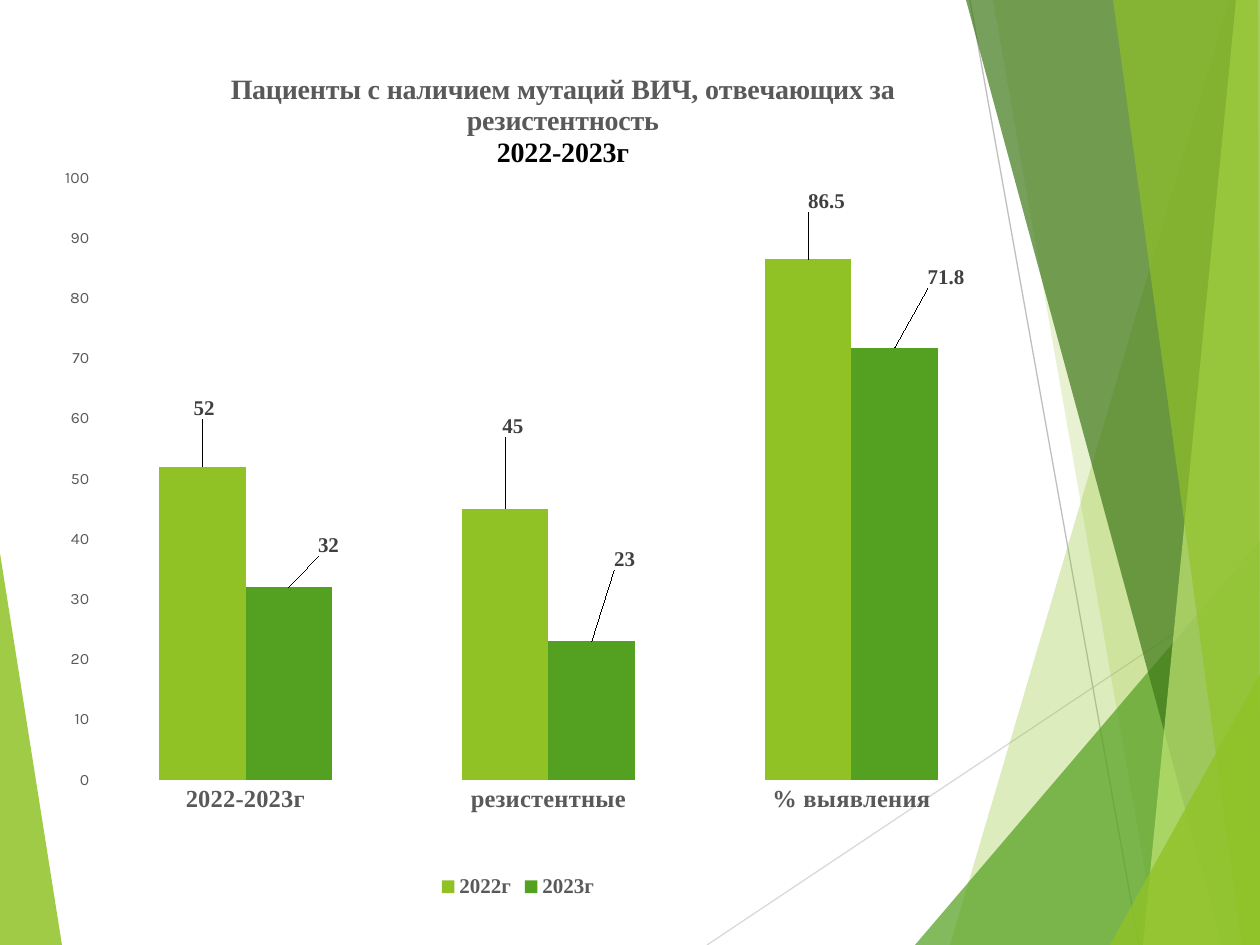
from lxml.etree import SubElement
from pptx import Presentation
from pptx.chart.data import CategoryChartData
from pptx.dml.color import RGBColor
from pptx.enum.chart import (XL_CHART_TYPE as ChartType, XL_LABEL_POSITION as LabelPosition,
                             XL_LEGEND_POSITION as LegendPosition, XL_TICK_MARK as TickMark)
from pptx.enum.shapes import MSO_CONNECTOR as Connector
from pptx.oxml.ns import qn
from pptx.util import Emu, Inches, Pt

PX = 914400 / 126
SERIF, SANS = "Times New Roman", "Karla"
BLACK = RGBColor(0x00, 0x00, 0x00)
GRAY = RGBColor(0x59, 0x59, 0x59)
LABEL_GRAY = RGBColor(0x40, 0x40, 0x40)
LIGHT_LINE = RGBColor(0xD9, 0xD9, 0xD9)
MID_LINE = RGBColor(0xBF, 0xBF, 0xBF)
LIME = RGBColor(0x90, 0xC2, 0x26)
GREEN = RGBColor(0x54, 0xA0, 0x21)
DARK_GREEN = RGBColor(0x3F, 0x78, 0x19)
PALE_LIME = RGBColor(0xC0, 0xE4, 0x74)

LEFT_FACET = ([(0, 553), (62, 945), (0, 945)], LIME, 85)
RAYS = [((707, 945), (1260, 576), LIGHT_LINE), ((970, 0), (1139, 945), MID_LINE)]
RIGHT_FACETS = [
    ([(1229, 0), (950, 945), (1260, 945), (1260, 0)], LIME, 30),
    ([(993, 0), (1158, 945), (1260, 945), (1260, 0)], LIME, 20),
    ([(915, 945), (1260, 541), (1260, 945)], GREEN, 72),
    ([(966, 0), (1222, 945), (1260, 945), (1260, 0)], DARK_GREEN, 70),
    ([(1236, 0), (1143, 945), (1260, 945), (1260, 0)], PALE_LIME, 70),
    ([(1113, 0), (1242, 945), (1260, 945), (1258, 0)], LIME, 65),
    ([(1110, 945), (1260, 674), (1260, 945)], LIME, 80),
]

CHART_BOX = (33, 42, 970, 861)
CATEGORIES = ["2022-2023г", "резистентные", "% выявления"]
# name, values, colour, shift of each label in px from its place above the bar
SERIES = [
    ("2022г", (52, 45, 86.5), LIME, [(2, -42), (8, -66), (18, -42)]),
    ("2023г", (32, 23, 71.8), GREEN, [(40, -26), (33, -66), (51, -54)]),
]
TITLE = [("Пациенты с наличием мутаций ВИЧ, отвечающих за резистентность", GRAY),
         ("2022-2023г", BLACK)]


def set_font(font, size, color, name=SERIF, bold=True):
    font.size, font.name, font.bold = Pt(size), name, bold
    font.color.rgb = color


def set_layout(parent, index, **values):
    """Give a chart part a manual layout as its child number index."""
    for old in parent.findall(qn("c:layout")):
        parent.remove(old)
    layout = SubElement(parent, qn("c:layout"))
    parent.insert(index, layout)
    manual = SubElement(layout, qn("c:manualLayout"))
    for tag, value in values.items():
        SubElement(manual, qn(f"c:{tag}")).set("val", str(value))


class SlideBuilder:
    def __init__(self, slide):
        self.shapes = slide.shapes

    def facet(self, points, color, opacity):
        builder = self.shapes.build_freeform(*points[0], scale=PX)
        builder.add_line_segments(points[1:], close=True)
        shape = builder.convert_to_shape()
        shape.shadow.inherit = False
        shape.fill.solid()
        shape.fill.fore_color.rgb = color
        shape.line.fill.background()
        fill_color = shape.element.spPr.find(qn("a:solidFill")).find(qn("a:srgbClr"))
        SubElement(fill_color, qn("a:alpha")).set("val", str(opacity * 1000))

    def ray(self, start, end, color):
        ends = [Emu(round(value * PX)) for value in (*start, *end)]
        line = self.shapes.add_connector(Connector.STRAIGHT, *ends)
        line.line.color.rgb = color
        line.line.width = Pt(0.75)
        SubElement(line.element.spPr, qn("a:effectLst"))

    def column_chart(self, box):
        data = CategoryChartData()
        data.categories = CATEGORIES
        for name, values, *_ in SERIES:
            data.add_series(name, values)
        place = [Emu(round(value * PX)) for value in box]
        chart = self.shapes.add_chart(ChartType.COLUMN_CLUSTERED, *place, data).chart
        set_font(chart.font, 10, BLACK, SANS, False)
        plot = chart.plots[0]
        plot.gap_width, plot.overlap, plot.vary_by_categories = 150, 0, False
        set_layout(chart.element.chart.plotArea, 0, layoutTarget="inner", xMode="edge",
                   yMode="edge", x=0.063, y=0.158, w=0.937, h=0.699)
        self.chart_title(chart)
        self.axes(chart)
        for series, (_, _, color, shifts) in zip(plot.series, SERIES):
            series.format.fill.solid()
            series.format.fill.fore_color.rgb = color
            self.value_labels(series, shifts, box)
        chart.has_legend = True
        chart.legend.position = LegendPosition.BOTTOM
        chart.legend.include_in_layout = False
        set_font(chart.legend.font, 12, GRAY)

    def chart_title(self, chart):
        frame = chart.chart_title.text_frame
        for number, (text, color) in enumerate(TITLE):
            para = frame.add_paragraph() if number else frame.paragraphs[0]
            span = para.add_run()
            span.text = text
            set_font(para.font, 16, color)
            set_font(span.font, 16, color)
        set_layout(chart.chart_title._element, 1, xMode="edge", yMode="edge", x=0.2, y=0.03)

    def axes(self, chart):
        for axis in (chart.category_axis, chart.value_axis):
            axis.has_major_gridlines = False
            axis.major_tick_mark = axis.minor_tick_mark = TickMark.NONE
            axis.format.line.fill.background()
        set_font(chart.category_axis.tick_labels.font, 14, GRAY)
        values = chart.value_axis
        set_font(values.tick_labels.font, 9, GRAY, SANS, False)
        values.minimum_scale, values.maximum_scale, values.major_unit = 0, 100, 10

    def value_labels(self, series, shifts, box):
        series.data_labels.show_value = True
        set_font(series.data_labels.font, 12, LABEL_GRAY)
        for number, (right, down) in enumerate(shifts):
            label = series.points[number].data_label
            set_font(label.font, 12, LABEL_GRAY)
            label.position = LabelPosition.OUTSIDE_END
            set_layout(label._get_or_add_dLbl(), 1,
                       x=round(right / box[2], 3), y=round(down / box[3], 3))


def main():
    deck = Presentation()
    deck.slide_width, deck.slide_height = Inches(10), Inches(7.5)
    page = SlideBuilder(deck.slides.add_slide(deck.slide_layouts[6]))
    page.facet(*LEFT_FACET)
    for ray in RAYS:
        page.ray(*ray)
    for facet in RIGHT_FACETS:
        page.facet(*facet)
    page.column_chart(CHART_BOX)
    deck.save("out.pptx")


if __name__ == "__main__":
    main()
